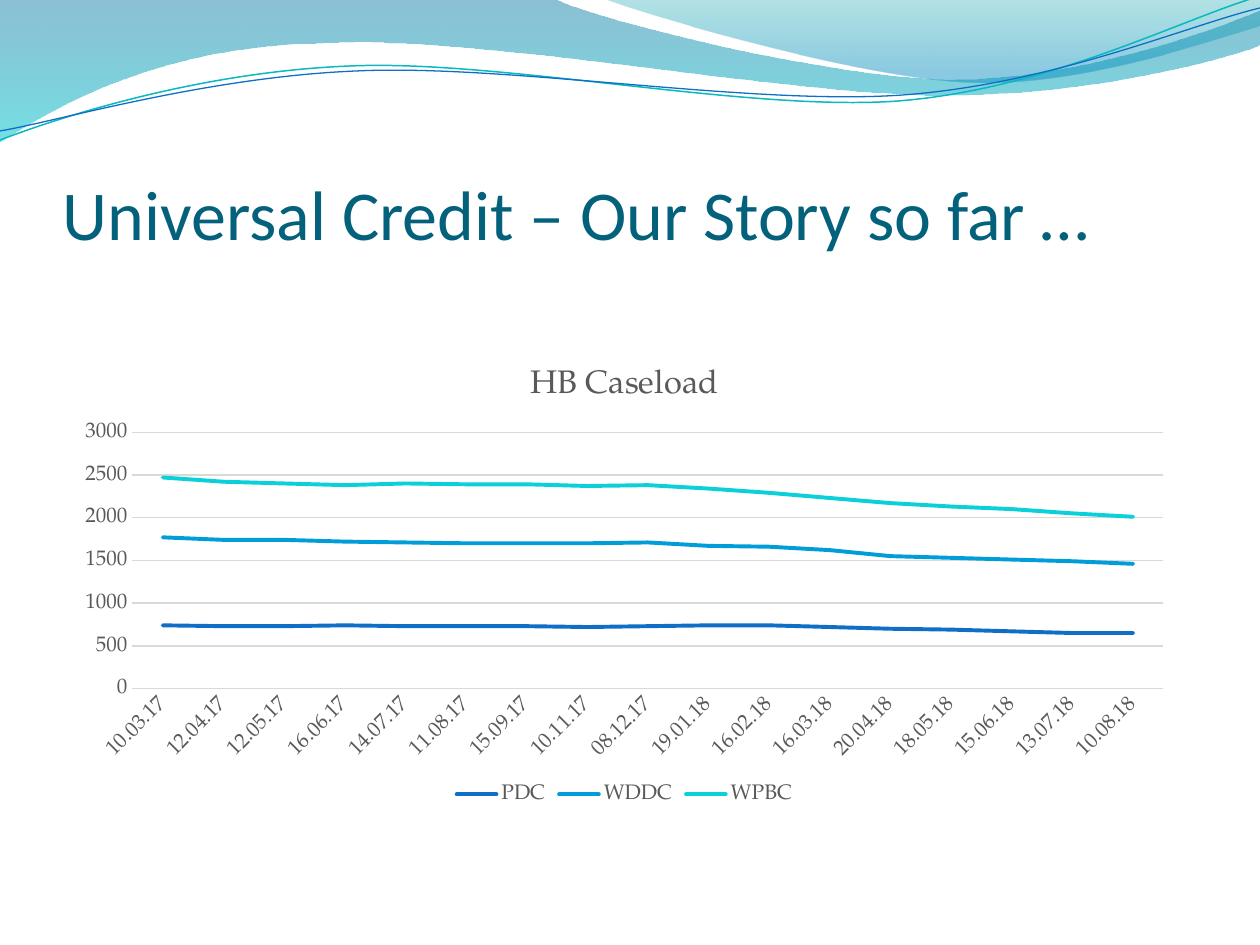
from lxml import etree
from pptx import Presentation
from pptx.chart.data import CategoryChartData
from pptx.dml.color import RGBColor
from pptx.enum.chart import XL_CHART_TYPE, XL_LEGEND_POSITION, XL_TICK_MARK
from pptx.enum.text import MSO_ANCHOR
from pptx.oxml.ns import qn
from pptx.util import Pt

PX = 914400 / 126
LINE_CHART = XL_CHART_TYPE.LINE
LEGEND_BOTTOM = XL_LEGEND_POSITION.BOTTOM
NO_TICKS = XL_TICK_MARK.NONE
ANCHOR_BOTTOM = MSO_ANCHOR.BOTTOM

TITLE_COLOR = RGBColor(0x04, 0x61, 0x7B)
CHART_TEXT = RGBColor(0x59, 0x59, 0x59)
GRID = RGBColor(0xD9, 0xD9, 0xD9)
BLUE = RGBColor(0x0F, 0x6F, 0xC6)
SKY = RGBColor(0x00, 0x9D, 0xD9)
CYAN = RGBColor(0x0B, 0xD0, 0xD9)
TEAL = RGBColor(0x0A, 0xB8, 0xBF)
WAVE_BLUE = RGBColor(0x00, 0x74, 0xA1)
WAVE_CYAN = RGBColor(0x00, 0xC6, 0xCF)
CREST_TEAL = RGBColor(0x00, 0xA1, 0xA9)
CREST_BLUE = RGBColor(0x00, 0x8B, 0xBF)
CHART_FONT = "TeX Gyre Pagella"


def px(value):
    return round(value * PX)


def add_curve(shapes, start, segments, close):
    """Draw straight (one point) and cubic Bezier (three points) segments."""
    builder = shapes.build_freeform(px(start[0]), px(start[1]))
    builder.add_line_segments(
        [(px(x), px(y)) for segment in segments for x, y in segment], close=close)
    shape = builder.convert_to_shape()
    shape.shadow.inherit = False
    steps = iter(list(shape._element.spPr.iter(qn("a:lnTo"))))
    for segment in segments:
        first, *others = [next(steps) for _ in segment]
        if others:
            curve = etree.Element(qn("a:cubicBezTo"))
            first.addprevious(curve)
            for step in (first, *others):
                curve.append(step[0])
                step.getparent().remove(step)
    return shape


presentation = Presentation()
presentation.slide_width = px(1260)
presentation.slide_height = px(945)
slide = presentation.slides.add_slide(presentation.slide_layouts[6])

# Translucent waves: start, segments, gradient stops (position, colour, opacity %)
waves = [
    ((0, 0),
     [[(554, -1)],
      [(600, 21), (837, 79), (955, 79)],
      [(1075, 79), (1207, 33), (1260, 11)],
      [(1261, 45)],
      [(1239, 55), (1096, 96), (940, 95)],
      [(783, 95), (481, 35), (324, 43)],
      [(163, 45), (58, 105), (-1, 142)]],
     [(0, WAVE_BLUE, 45), (1, WAVE_CYAN, 55)]),
    ((604, -1),
     [[(641, 14), (859, 78), (969, 82)],
      [(1079, 87), (1211, 40), (1260, 26)],
      [(1260, 0)]],
     [(0, CREST_TEAL, 30), (0.8, CREST_BLUE, 45)]),
]
for start, segments, stops in waves:
    wave = add_curve(slide.shapes, start, segments, True)
    wave.line.fill.background()
    wave.fill.gradient()
    wave.fill.gradient_angle = 270
    for stop, (position, color, _) in zip(wave.fill.gradient_stops, stops):
        stop.position = position
        stop.color.rgb = color
    for element, (_, _, opacity) in zip(wave._element.spPr.iter(qn("a:srgbClr")), stops):
        etree.SubElement(element, qn("a:alpha")).set("val", str(opacity * 1000))

# Thin lines under the waves
ripples = [
    ((0, 140),
     [[(60, 117), (199, 72), (349, 66)],
      [(498, 59), (747, 112), (898, 101)],
      [(1049, 89), (1182, 19), (1257, -3)]], TEAL, 0.85),
    ((0, 131),
     [[(59, 121), (207, 77), (357, 71)],
      [(508, 64), (752, 106), (903, 95)],
      [(1053, 84), (1186, 26), (1260, 8)]], BLUE, 0.75),
]
for start, segments, color, width in ripples:
    ripple = add_curve(slide.shapes, start, segments, False)
    ripple.fill.background()
    ripple.line.color.rgb = color
    ripple.line.width = Pt(width)

# Title
title = slide.shapes.add_textbox(px(63), px(97), px(1134), px(158))
frame = title.text_frame
frame.word_wrap = True
frame.vertical_anchor = ANCHOR_BOTTOM
frame.margin_left = frame.margin_right = frame.margin_bottom = 0
paragraph = frame.paragraphs[0]
paragraph.text = "Universal Credit – Our Story so far …"
paragraph.font.name = "Calibri"
paragraph.font.size = Pt(40)
paragraph.font.color.rgb = TITLE_COLOR

# Caseload chart
caseload = [
    ("PDC", BLUE, [740, 730, 730, 740, 730, 730, 730, 720, 730,
                   740, 740, 720, 700, 690, 670, 650, 650]),
    ("WDDC", SKY, [1770, 1740, 1740, 1720, 1710, 1700, 1700, 1700, 1710,
                   1670, 1660, 1620, 1550, 1530, 1510, 1490, 1460]),
    ("WPBC", CYAN, [2470, 2420, 2400, 2380, 2400, 2390, 2390, 2370, 2380,
                    2340, 2290, 2230, 2170, 2130, 2100, 2050, 2010]),
]
chart_data = CategoryChartData(number_format="0")
chart_data.categories = [
    "10.03.17", "12.04.17", "12.05.17", "16.06.17", "14.07.17", "11.08.17",
    "15.09.17", "10.11.17", "08.12.17", "19.01.18", "16.02.18", "16.03.18",
    "20.04.18", "18.05.18", "15.06.18", "13.07.18", "10.08.18",
]
for name, _, values in caseload:
    chart_data.add_series(name, values)
chart = slide.shapes.add_chart(
    LINE_CHART, px(63), px(344), px(1123), px(466), chart_data).chart
chart.font.name = CHART_FONT
chart.font.size = Pt(12)
chart.font.color.rgb = CHART_TEXT

chart.has_title = True
chart.chart_title.include_in_layout = False
heading = chart.chart_title.text_frame.paragraphs[0]
heading.text = "HB Caseload"
heading.font.name = CHART_FONT
heading.font.size = Pt(18.6)
heading.font.bold = False
heading.font.color.rgb = CHART_TEXT

chart.has_legend = True
chart.legend.position = LEGEND_BOTTOM
chart.legend.include_in_layout = False

category_axis, value_axis = chart.category_axis, chart.value_axis
for axis in (category_axis, value_axis):
    axis.major_tick_mark = axis.minor_tick_mark = NO_TICKS
    axis.tick_labels.font.size = Pt(12)
category_axis.tick_labels.font.color.rgb = CHART_TEXT
category_axis._element.find(qn("c:txPr")).find(qn("a:bodyPr")).set("rot", "-2700000")
value_axis.minimum_scale = 0
value_axis.maximum_scale = 3000
value_axis.major_unit = 500
value_axis.format.line.fill.background()
for line in (category_axis.format.line, value_axis.major_gridlines.format.line):
    line.color.rgb = GRID
    line.width = Pt(0.75)

plot = chart.plots[0]
plot.vary_by_categories = False
for series, (_, color, _) in zip(plot.series, caseload):
    series.smooth = False
    series.format.line.color.rgb = color
    series.format.line.width = Pt(2.25)
    series.format.line._ln.set("cap", "rnd")

presentation.save("out.pptx")
